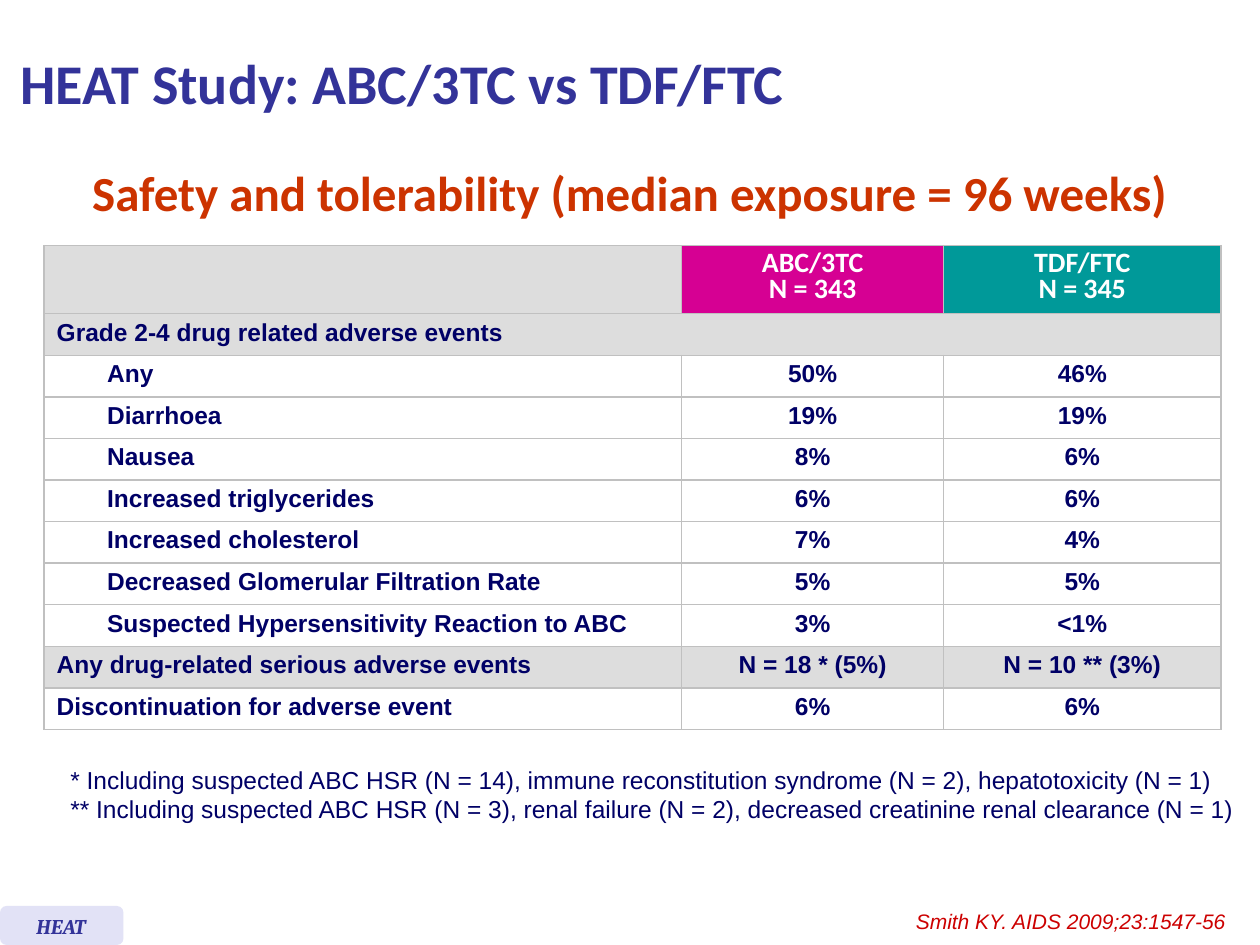
from lxml import etree
from pptx import Presentation
from pptx.dml.color import RGBColor
from pptx.enum.shapes import MSO_SHAPE
from pptx.enum.text import MSO_ANCHOR, PP_ALIGN
from pptx.oxml.ns import qn
from pptx.util import Inches, Pt

LEFT, CENTER = PP_ALIGN.LEFT, PP_ALIGN.CENTER
MIDDLE = MSO_ANCHOR.MIDDLE
ROUNDED = MSO_SHAPE.ROUNDED_RECTANGLE

# Each style: font, size, colour, bold, italic
THEME = {
    "title": ("Calibri", 32, "333399", True, False),
    "subtitle": ("Calibri", 28, "CC3300", True, False),
    "header": ("Calibri", 16, "FFFFFF", True, False),
    "body": ("Arial", 14, "000066", True, False),
    "note": ("Arial", 14, "000066", False, False),
    "tag": ("Cambria", 12, "333399", True, True),
    "source": ("Arial", 12, "CC0000", False, True),
    "abc": "D60093",
    "tdf": "009999",
    "band": "DDDDDD",
    "plain": "FFFFFF",
    "border": "C0C0C0",
    "tag_fill": "E2E2F6",
}


def write(tf, text, style, align=LEFT, line=None):
    name, size, color, bold, italic = THEME[style]
    tf.text = text
    for p in tf.paragraphs:
        p.alignment = align
        if line:
            p.line_spacing = Pt(line)
        p.font.name, p.font.size = name, Pt(size)
        p.font.bold, p.font.italic = bold, italic
        p.font.color.rgb = RGBColor.from_string(color)


def fill_cell(cell, color):
    tcPr = cell._tc.get_or_add_tcPr()
    for side in ("lnL", "lnR", "lnT", "lnB"):
        ln = etree.SubElement(tcPr, qn(f"a:{side}"), w=str(Pt(1)))
        solid = etree.SubElement(ln, qn("a:solidFill"))
        etree.SubElement(solid, qn("a:srgbClr"), val=THEME["border"])
    cell.fill.solid()
    cell.fill.fore_color.rgb = RGBColor.from_string(color)


prs = Presentation()
prs.slide_width, prs.slide_height = Inches(10), Inches(7.5)
s = prs.slides.add_slide(prs.slide_layouts[5])

# Title
title = s.shapes.title
title.left, title.top = Inches(0.06), Inches(0.05)
title.width, title.height = Inches(8.96), Inches(1.21)
title.text_frame.vertical_anchor = MIDDLE
write(title.text_frame, "HEAT Study: ABC/3TC vs TDF/FTC", "title")

# Tag background
tag = s.shapes.add_shape(ROUNDED, 0, Inches(7.19), Inches(0.98), Inches(0.31))
tag.shadow.inherit = False
tag.fill.solid()
tag.fill.fore_color.rgb = RGBColor.from_string(THEME["tag_fill"])
tag.line.fill.background()

# Subtitle, footnotes, tag label and reference
notes = (
    "* Including suspected ABC HSR (N = 14), immune reconstitution syndrome (N = 2), hepatotoxicity (N = 1)\n"
    "** Including suspected ABC HSR (N = 3), renal failure (N = 2), decreased creatinine renal clearance (N = 1)"
)
texts = [
    ("Safety and tolerability (median exposure = 96 weeks)", "subtitle", CENTER, True, (0.06, 1.24, 9.87, 0.71)),
    (notes, "note", LEFT, True, (0.46, 6.02, 9.47, 0.57)),
    ("HEAT", "tag", LEFT, False, (0.19, 7.2, 0.61, 0.3)),
    ("Smith KY. AIDS 2009;23:1547-56", "source", LEFT, False, (7.17, 7.16, 2.68, 0.3)),
]
for text, style, align, wrap, box in texts:
    tf = s.shapes.add_textbox(*(Inches(v) for v in box)).text_frame
    tf.word_wrap = wrap
    write(tf, text, style, align)

# Adverse events table
rows = [
    ("", "ABC/3TC\vN = 343", "TDF/FTC\vN = 345"),
    ("Grade 2-4 drug related adverse events", "", ""),
    ("Any", "50%", "46%"),
    ("Diarrhoea", "19%", "19%"),
    ("Nausea", "8%", "6%"),
    ("Increased triglycerides", "6%", "6%"),
    ("Increased cholesterol", "7%", "4%"),
    ("Decreased Glomerular Filtration Rate", "5%", "5%"),
    ("Suspected Hypersensitivity Reaction to ABC", "3%", "<1%"),
    ("Any drug-related serious adverse events", "N = 18 * (5%)", "N = 10 ** (3%)"),
    ("Discontinuation for adverse event", "6%", "6%"),
]
SECTION, SERIOUS = 1, 9
table = s.shapes.add_table(len(rows), 3, Inches(0.35), Inches(1.95), Inches(9.34), Inches(3.82)).table
for col, width in zip(table.columns, (5.06, 2.08, 2.2)):
    col.width = Inches(width)
for i, values in enumerate(rows):
    table.rows[i].height = Inches(0.33 if i else 0.54)
    fills = [THEME["band" if i in (SECTION, SERIOUS) else "plain"]] * 3
    if i == 0:
        fills = [THEME["band"], THEME["abc"], THEME["tdf"]]
    for j, value in enumerate(values):
        cell = table.cell(i, j)
        cell.vertical_anchor = MIDDLE
        if j == 0 and SECTION < i < SERIOUS:
            cell.margin_left = Inches(0.5)
        write(cell.text_frame, value, "body" if i else "header", CENTER if j else LEFT, 13.6 if i else 15.2)
        fill_cell(cell, fills[j])
table.cell(SECTION, 0).merge(table.cell(SECTION, 2))

prs.save("out.pptx")
